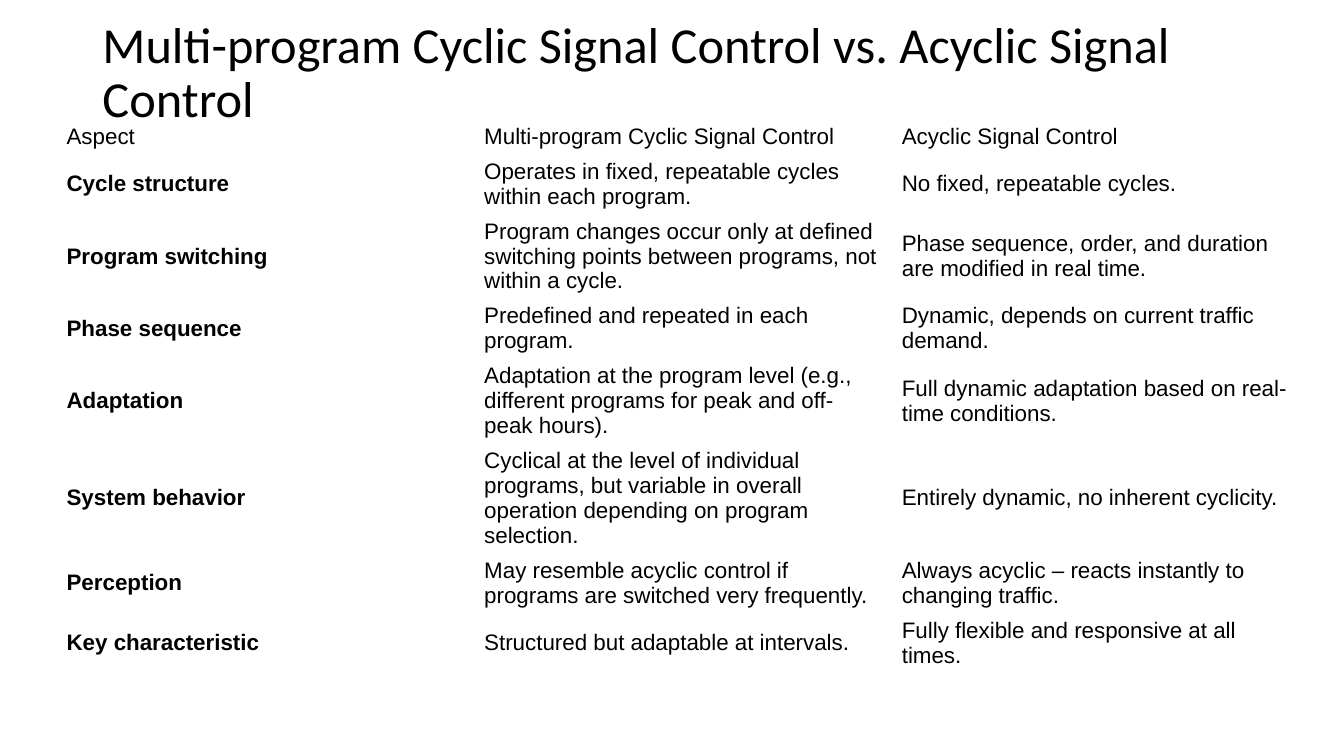
from typing import NamedTuple

import pptx
import pptx.dml.color
import pptx.enum.text
import pptx.slide
import pptx.util

Pt = pptx.util.Pt
BLACK = pptx.dml.color.RGBColor(0, 0, 0)
LINE_HEIGHT, ROW_PADDING = 17.8, 7.2
COLUMN_WIDTH = 298.3


class Row(NamedTuple):
    aspect: str
    cyclic: str
    acyclic: str
    lines: int


HEADER = Row("Aspect", "Multi-program Cyclic Signal Control", "Acyclic Signal Control", 1)
ROWS = [
    Row("Cycle structure",
        "Operates in fixed, repeatable cycles within each program.",
        "No fixed, repeatable cycles.", 2),
    Row("Program switching",
        "Program changes occur only at defined switching points between programs, "
        "not within a cycle.",
        "Phase sequence, order, and duration are modified in real time.", 3),
    Row("Phase sequence",
        "Predefined and repeated in each program.",
        "Dynamic, depends on current traffic demand.", 2),
    Row("Adaptation",
        "Adaptation at the program level (e.g., different programs for peak and "
        "off-peak hours).",
        "Full dynamic adaptation based on real-time conditions.", 3),
    Row("System behavior",
        "Cyclical at the level of individual programs, but variable in overall "
        "operation depending on program selection.",
        "Entirely dynamic, no inherent cyclicity.", 4),
    Row("Perception",
        "May resemble acyclic control if programs are switched very frequently.",
        "Always acyclic – reacts instantly to changing traffic.", 2),
    Row("Key characteristic",
        "Structured but adaptable at intervals.",
        "Fully flexible and responsive at all times.", 2),
]


def add_run(p, text: str, font: str, size: float, bold: bool = False) -> None:
    r = p.add_run()
    r.text = text
    r.font.name = font
    r.font.size = Pt(size)
    r.font.bold = bold
    r.font.color.rgb = BLACK


def add_title(s: pptx.slide.Slide, text: str) -> None:
    sp = s.shapes.title
    sp.left, sp.top, sp.width, sp.height = Pt(66), Pt(0.75), Pt(828), Pt(104.4)
    tf = sp.text_frame
    tf.word_wrap = True
    tf.auto_size = pptx.enum.text.MSO_AUTO_SIZE.NONE
    tf.vertical_anchor = pptx.enum.text.MSO_ANCHOR.MIDDLE
    p = tf.paragraphs[0]
    p.alignment = pptx.enum.text.PP_ALIGN.LEFT
    p.line_spacing = 0.9
    add_run(p, text, "Calibri", 36)


def add_comparison(s: pptx.slide.Slide, rows: list[Row]) -> None:
    heights = [LINE_HEIGHT * row.lines + ROW_PADDING for row in rows]
    table = s.shapes.add_table(len(rows), 3, Pt(40.4), Pt(85),
                               Pt(3 * COLUMN_WIDTH), Pt(sum(heights))).table
    table.first_row = False
    table.horz_banding = False
    for column in table.columns:
        column.width = Pt(COLUMN_WIDTH)
    for i, (row, height) in enumerate(zip(rows, heights)):
        table.rows[i].height = Pt(height)
        for j, text in enumerate((row.aspect, row.cyclic, row.acyclic)):
            cell = table.cell(i, j)
            cell.fill.background()
            cell.vertical_anchor = pptx.enum.text.MSO_ANCHOR.MIDDLE
            add_run(cell.text_frame.paragraphs[0], text, "Arial", 16,
                    bold=i > 0 and j == 0)


def main() -> None:
    prs = pptx.Presentation()
    prs.slide_width, prs.slide_height = Pt(960), Pt(540)
    s = prs.slides.add_slide(prs.slide_layouts[5])  # title only

    # Title
    add_title(s, "Multi-program Cyclic Signal Control vs. Acyclic Signal Control")

    # Comparison table
    add_comparison(s, [HEADER, *ROWS])

    prs.save("out.pptx")


if __name__ == "__main__":
    main()
